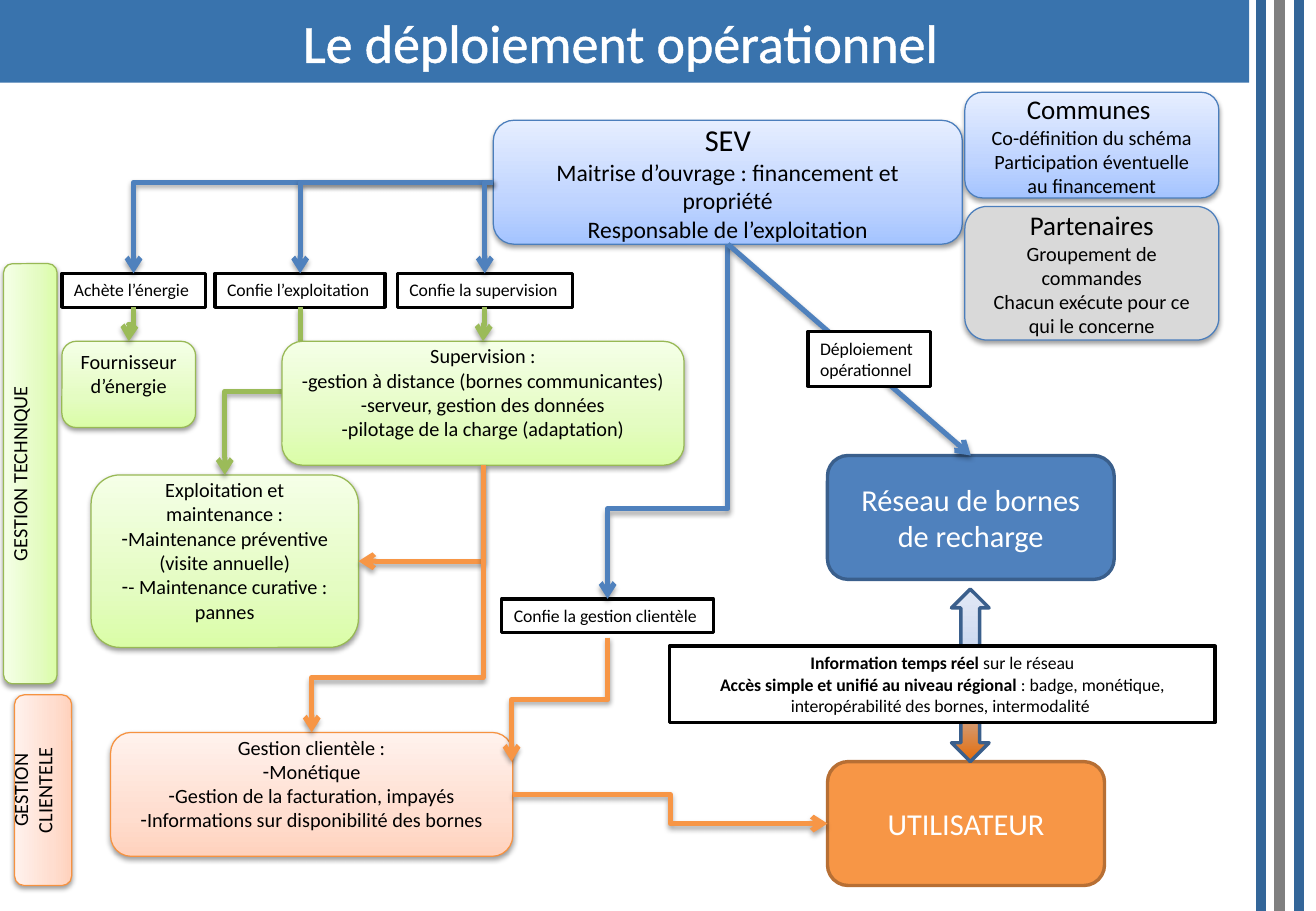
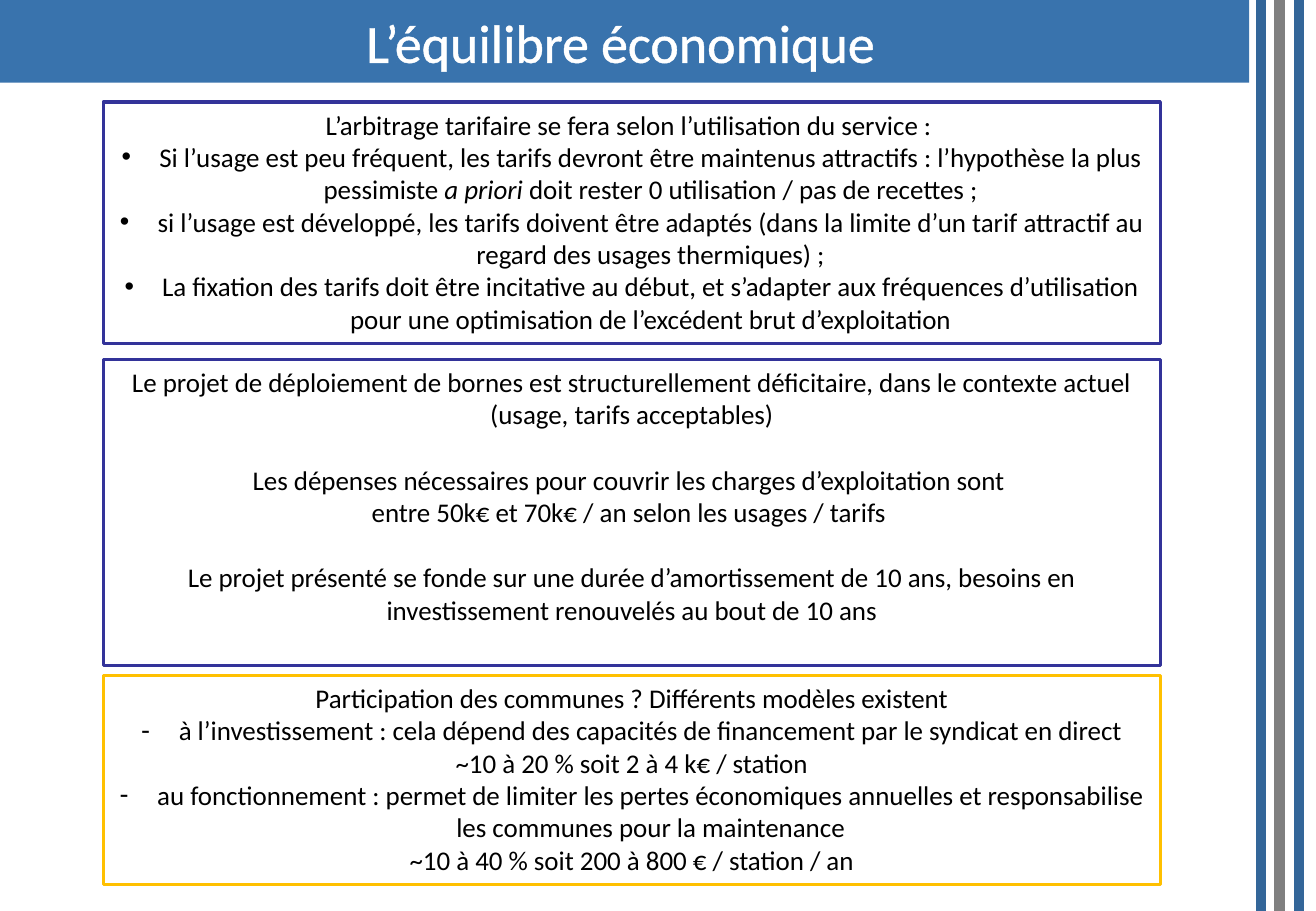
import copy
import dataclasses

import pptx
import pptx.dml.color
import pptx.enum.shapes
import pptx.enum.text
import pptx.oxml
import pptx.oxml.ns
import pptx.util
import lxml.etree

PX = 9144
FONT = "Calibri"
BLUE, GREEN, ORANGE = "4F81BD", "9BBB59", "F79646"
BLACK, WHITE = "000000", "FFFFFF"
BLUE_TINT = ("A4C4FF", "BFD4FF", "E6EEFF")
GREEN_TINT = ("DAFDA7", "E4FCC2", "F5FFE7")
ORANGE_TINT = ("FFD2BD", "FFDED0", "FFF2ED")
BLUE_EDGE, GREEN_EDGE, ORANGE_EDGE = "4B7EBC", "98B955", "F69240"
DARK_BLUE, PANEL_EDGE = "3A5F8C", "333399"
TOP, LEFT, BOTTOM, RIGHT = range(4)
SHAPE = pptx.enum.shapes.MSO_SHAPE
CONNECTOR = pptx.enum.shapes.MSO_CONNECTOR
CENTER = pptx.enum.text.PP_ALIGN.CENTER
MIDDLE = pptx.enum.text.MSO_ANCHOR.MIDDLE
qn = pptx.oxml.ns.qn


@dataclasses.dataclass
class Area:
    left: int
    top: int
    width: int
    height: int

    def inner(self, left, top, width, height):
        return Area(self.left + left, self.top + top, width, height)

    def emu(self):
        return [px(n) for n in (self.left, self.top, self.width, self.height)]


@dataclasses.dataclass
class Line:
    spans: object
    size: float = 12
    bullet: str = ""
    indent: int = 0
    before: float = 0


def px(length):
    return int(length * PX)


def rgb(value):
    return pptx.dml.color.RGBColor.from_string(value)


def outline(target, color, width):
    target.line.color.rgb = rgb(color)
    target.line.width = pptx.util.Pt(width)


def sub(parent, tag, **attributes):
    return lxml.etree.SubElement(parent, qn(tag), attributes)


def add_shadow(effects, alpha, distance):
    shadow = sub(effects, "a:outerShdw", blurRad=str(pptx.util.Pt(3.1)),
                 dist=str(pptx.util.Pt(distance)), dir="5400000", rotWithShape="0")
    sub(sub(shadow, "a:srgbClr", val=BLACK), "a:alpha", val=str(alpha * 1000))


def paint(box, colors, middle=35):
    if isinstance(colors, str):
        box.fill.solid()
        box.fill.fore_color.rgb = rgb(colors)
        return
    box.fill.gradient()
    box.fill.gradient_angle = 90
    stops = box._element.spPr.find(".//" + qn("a:gsLst"))
    stops.append(copy.deepcopy(stops[-1]))
    for stop, color, place in zip(box.fill.gradient_stops, colors, (0, middle, 100)):
        stop.color.rgb = rgb(color)
        stop.position = place / 100


def write(frame, lines, color=BLACK, align=CENTER):
    for index, line in enumerate(lines):
        para = frame.add_paragraph() if index else frame.paragraphs[0]
        para.alignment = align
        if line.before:
            para.space_before = pptx.util.Pt(line.before)
        if line.bullet:
            properties = para._p.get_or_add_pPr()
            properties.set("marL", str(px(line.indent)))
            properties.set("indent", str(-px(line.indent)))
            sub(properties, "a:buFont", typeface="Arial")
            sub(properties, "a:buChar", char=line.bullet)
        spans = [(line.spans, "")] if isinstance(line.spans, str) else line.spans
        for text, style in spans:
            span = para.add_run()
            span.text = text
            span.font.name = FONT
            span.font.size = pptx.util.Pt(line.size)
            span.font.color.rgb = rgb(color)
            if style:
                setattr(span.font, style, True)


def add_block(page, area, kind, colors, edge=None, width=2.0, middle=35):
    block = page.shapes.add_shape(kind, *area.emu())
    block.shadow.inherit = False
    paint(block, colors, middle)
    if edge:
        outline(block, edge, width)
    else:
        block.line.fill.background()
    return block


def add_card(page, area, colors, edge, lines, lift=0, color=BLACK, width=0.75, shadow=True):
    card = add_block(page, area, SHAPE.ROUNDED_RECTANGLE, colors, edge, width)
    if shadow:
        add_shadow(card._element.spPr.find(qn("a:effectLst")), 38, 1.6)
    card.text_frame.word_wrap = True
    card.text_frame.vertical_anchor = MIDDLE
    card.text_frame.margin_bottom = px(5 + lift)
    write(card.text_frame, lines, color)
    return card


def add_strip(page, area, colors, edge, text):
    shift = (area.width - area.height) / 2
    lying = area.inner(shift, -shift, area.height, area.width)
    strip = add_card(page, lying, colors, edge, [Line(text)], lift=18)
    strip.rotation = 270


def add_panel(page, area, edge, lines, wrap=True, align=CENTER):
    panel = page.shapes.add_textbox(*area.emu())
    paint(panel, WHITE)
    outline(panel, edge, 2)
    panel.text_frame.word_wrap = wrap
    if not wrap:
        panel.text_frame.auto_size = pptx.enum.text.MSO_AUTO_SIZE.SHAPE_TO_FIT_TEXT
    write(panel.text_frame, lines, align=align)
    return panel


def add_label(page, area, *texts):
    lines = [Line(text, 10.5) for text in texts]
    return add_panel(page, area, BLACK, lines, False, pptx.enum.text.PP_ALIGN.LEFT)


def add_line(page, kind, ends, color, width):
    line = page.shapes.add_connector(kind, *[px(n) for n in ends])
    outline(line, color, width)
    effects = sub(line._element.spPr, "a:effectLst")
    return line, effects


def add_arrow(page, color, kind=CONNECTOR.ELBOW, ends=(0, 0, 0, 0)):
    arrow, effects = add_line(page, kind, ends, color, 3)
    sub(arrow._element.spPr.find(qn("a:ln")), "a:tailEnd", type="arrow")
    add_shadow(effects, 35, 1.8)
    return arrow


def bend_arrow(arrow, upright, corners, bend):
    properties = arrow._element.spPr
    geometry = properties.find(qn("a:prstGeom"))
    geometry.set("prst", f"bentConnector{corners + 1}")
    if corners == 2:
        sub(geometry.find(qn("a:avLst")), "a:gd", name="adj1", fmla=f"val {int(bend * 1000)}")
    if upright:
        start_x, start_y, end_x, end_y = arrow.begin_x, arrow.begin_y, arrow.end_x, arrow.end_y
        across, down = abs(end_x - start_x), end_y - start_y
        arrow.left, arrow.top = (start_x + end_x - down) // 2, (start_y + end_y - across) // 2
        arrow.width, arrow.height = down, across
        frame = properties.find(qn("a:xfrm"))
        frame.set("rot", "5400000")
        frame.set("flipH", "0")
        frame.set("flipV", "1" if end_x > start_x else "0")


def join(page, color, source, source_side, target, target_side, bend=50, straight=False):
    arrow = add_arrow(page, color, CONNECTOR.STRAIGHT if straight else CONNECTOR.ELBOW)
    arrow.begin_connect(source, source_side)
    arrow.end_connect(target, target_side)
    if not straight:
        corners = 2 if source_side % 2 == target_side % 2 else 1
        bend_arrow(arrow, source_side in (TOP, BOTTOM), corners, bend)


def add_page(deck, title):
    page = deck.slides.add_slide(deck.slide_layouts[6])
    for x, color in ((1069, "336699"), (1053, "808080"), (1038, "336699")):
        add_line(page, CONNECTOR.STRAIGHT, (x, 0, x, 750), color, 6)
    add_block(page, Area(-2, 0, 1030, 68), SHAPE.RECTANGLE, "3973AD")
    heading = page.shapes.add_textbox(*Area(0, 0, 1022, 68).emu()).text_frame
    heading.word_wrap = True
    heading.vertical_anchor = MIDDLE
    write(heading, [Line(title, 32)], WHITE)
    properties = heading.paragraphs[0].runs[0]._r.get_or_add_rPr()
    edge = lxml.etree.Element(qn("a:ln"), w=str(pptx.util.Pt(1.45)))
    sub(sub(edge, "a:solidFill"), "a:srgbClr", val=WHITE)
    properties.insert(0, edge)
    return page


def add_owners(page, area):
    owner = add_card(page, area.inner(0, 23, 386, 102), BLUE_TINT, BLUE_EDGE, [
        Line("SEV", 18), Line("Maitrise d’ouvrage : financement et propriété", 14),
        Line("Responsable de l’exploitation", 14)])
    add_card(page, area.inner(388, 0, 209, 87), BLUE_TINT, BLUE_EDGE, [
        Line("Communes ", 16), Line("Co-définition du schéma"),
        Line("Participation éventuelle au financement")])
    add_card(page, area.inner(388, 94, 209, 110), "D9D9D9", BLUE_EDGE, [
        Line("Partenaires", 16), Line("Groupement de commandes"),
        Line("Chacun exécute pour ce qui le concerne")])
    return owner


def add_technical(page, area, owner):
    add_strip(page, area.inner(0, 0, 44, 346), GREEN_TINT, GREEN_EDGE, "GESTION TECHNIQUE")
    labels = [add_label(page, area.inner(left, 8, width, 28), text) for left, width, text in (
        (48, 118, "Achète l’énergie"), (174, 140, "Confie l’exploitation"),
        (324, 144, "Confie la supervision"))]
    for label in labels:
        join(page, BLUE, owner, LEFT, label, TOP)
    cards = []
    for label, box, lines in zip(labels, (
            (48, 64, 110, 71), (72, 174, 220, 142), (229, 64, 331, 102)), (
            [Line("Fournisseur d’énergie")],
            [Line("Exploitation et maintenance :"),
             Line("Maintenance préventive (visite annuelle)", bullet="-"),
             Line("- Maintenance curative : pannes", bullet="-")],
            [Line("Supervision :"), Line("-gestion à distance (bornes communicantes)"),
             Line("-serveur, gestion des données"),
             Line("-pilotage de la charge (adaptation)")])):
        cards.append(add_card(page, area.inner(*box), GREEN_TINT, GREEN_EDGE, lines, lift=18))
        join(page, GREEN, label, BOTTOM, cards[-1], TOP)
    supplier, upkeep, supervision = cards
    join(page, ORANGE, supervision, BOTTOM, upkeep, RIGHT)
    return supervision


def add_customer(page, area, owner, supervision):
    add_strip(page, area.inner(0, 79, 47, 157), ORANGE_TINT, ORANGE_EDGE, "GESTION CLIENTELE")
    label = add_label(page, area.inner(401, 0, 174, 28), "Confie la gestion clientèle")
    join(page, BLUE, owner, BOTTOM, label, TOP, 74.6)
    items = ("Monétique", "Gestion de la facturation, impayés",
             "Informations sur disponibilité des bornes")
    customer = add_card(page, area.inner(79, 110, 331, 102), ORANGE_TINT, ORANGE_EDGE,
                        [Line("Gestion clientèle :")] + [Line(item, bullet="-") for item in items],
                        lift=18)
    join(page, ORANGE, supervision, BOTTOM, customer, TOP, 79.5)
    x, y = area.left, area.top
    entry = add_arrow(page, ORANGE, ends=(x + 488, y + 32, x + 409, y + 134))
    bend_arrow(entry, True, 2, 50)
    return customer


def add_network(page, area, owner, customer):
    network, user = [
        add_card(page, area.inner(130, top, width, 102), fill, edge, [Line(text, 18)],
                 color=WHITE, width=2, shadow=False)
        for top, width, fill, edge, text in (
            (102, 236, BLUE, DARK_BLUE, "Réseau de bornes de recharge"),
            (354, 228, ORANGE, "B76F34", "UTILISATEUR"))]
    join(page, BLUE, owner, BOTTOM, network, TOP, straight=True)
    join(page, ORANGE, customer, RIGHT, user, LEFT)
    add_label(page, area.inner(114, 0, 101, 45), "Déploiement", "opérationnel")
    add_block(page, area.inner(232, 212, 31, 142), SHAPE.UP_DOWN_ARROW,
              ("E46C0A", "C2D1ED", "E1E8F5"), DARK_BLUE, middle=50)
    add_panel(page, area.inner(0, 259, 449, 63), BLACK, [
        Line([("Information temps réel ", "bold"), ("sur le réseau", "")], 10.5),
        Line([("Accès simple et unifié au niveau régional ", "bold"),
              (": badge, monétique, interopérabilité des bornes, intermodalité ", "")], 10.5)])


def add_deployment(deck):
    page = add_page(deck, "Le déploiement opérationnel")
    owner = add_owners(page, Area(406, 76, 597, 204))
    supervision = add_technical(page, Area(3, 217, 560, 346), owner)
    customer = add_customer(page, Area(12, 493, 575, 236), owner, supervision)
    add_network(page, Area(551, 273, 449, 456), owner, customer)


def add_balance(deck, area):
    page = add_page(deck, "L’équilibre économique")
    dot = dict(size=16, bullet="•", indent=31)
    dash = dict(size=16, bullet="-", indent=31)
    add_panel(page, area.inner(0, 0, area.width, 199), PANEL_EDGE, [
        Line("L’arbitrage tarifaire se fera selon l’utilisation du service : ", 16),
        Line([("Si l’usage est peu fréquent, les tarifs devront être maintenus attractifs : "
               "l’hypothèse la plus pessimiste ", ""), ("a priori ", "italic"),
              ("doit rester 0 utilisation / pas de recettes ;", "")], **dot),
        Line("si l’usage est développé, les tarifs doivent être adaptés (dans la limite d’un "
             "tarif attractif au regard des usages thermiques) ;", **dot),
        Line("La fixation des tarifs doit être incitative au début, et s’adapter aux fréquences "
             "d’utilisation pour une optimisation de l’excédent brut d’exploitation", **dot)])
    add_panel(page, area.inner(0, 212, area.width, 252), PANEL_EDGE, [
        Line("Le projet de déploiement de bornes est structurellement déficitaire, dans le "
             "contexte actuel (usage, tarifs acceptables)", 16),
        Line("Les dépenses nécessaires pour couvrir les charges d’exploitation sont ", 16,
             before=19.5),
        Line("entre 50k€ et 70k€ / an selon les usages / tarifs ", 16),
        Line("Le projet présenté se fonde sur une durée d’amortissement de 10 ans, besoins en "
             "investissement renouvelés au bout de 10 ans", 16, before=19.5)])
    add_panel(page, area.inner(0, 472, area.width, 172), "FFC000", [
        Line("Participation des communes ? Différents modèles existent", 16),
        Line("à l’investissement : cela dépend des capacités de financement par le syndicat "
             "en direct", **dash),
        Line("~10 à 20 % soit 2 à 4 k€ / station", 16),
        Line("au fonctionnement : permet de limiter les pertes économiques annuelles et "
             "responsabilise les communes pour la maintenance", **dash),
        Line("~10 à 40 % soit 200 à 800 € / station / an", 16)])


def main():
    deck = pptx.Presentation()
    deck.slide_width, deck.slide_height = px(1083), px(750)
    add_deployment(deck)
    add_balance(deck, Area(85, 84, 870, 644))
    deck.save("out.pptx")


if __name__ == "__main__":
    main()
